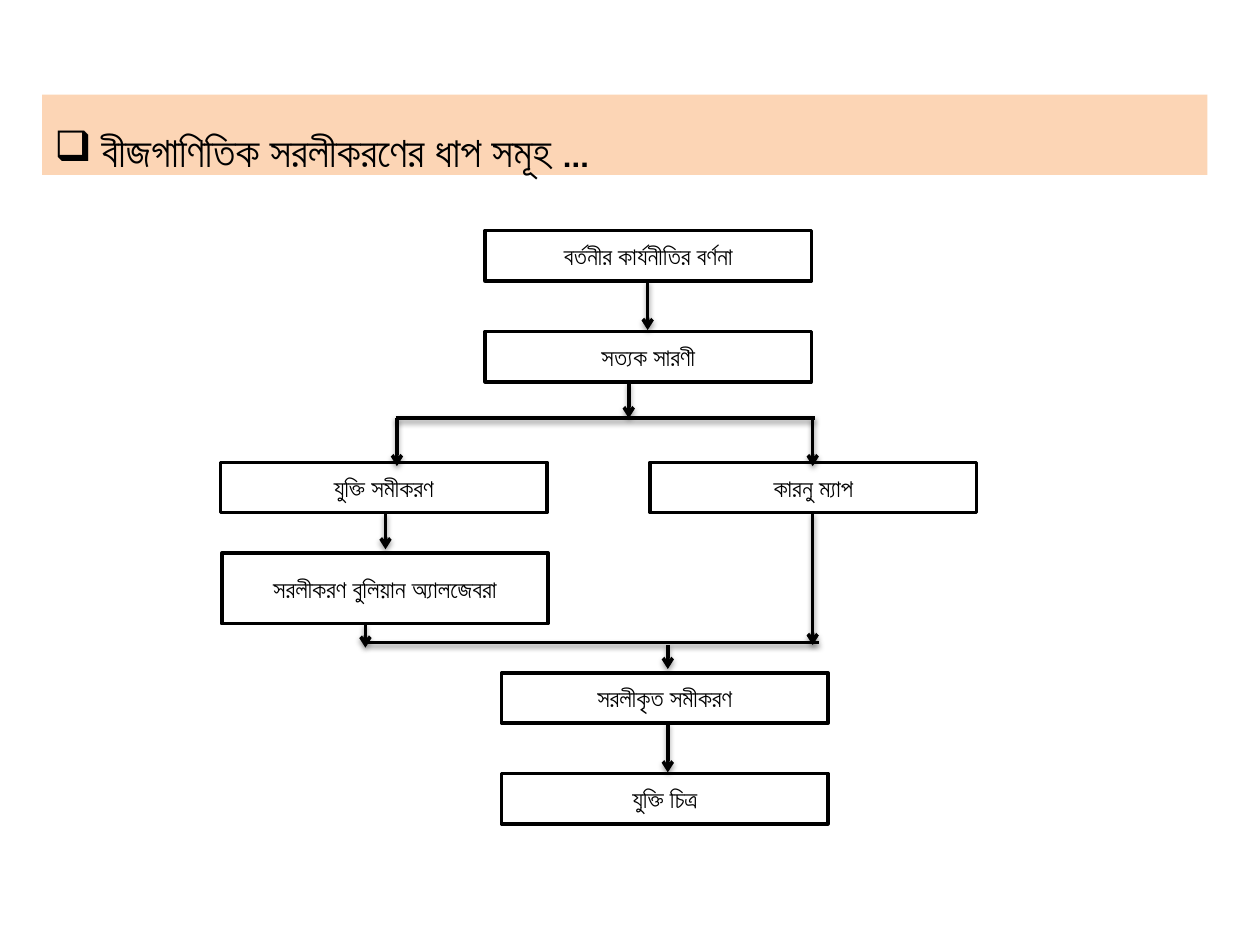
from lxml import etree
from pptx import Presentation
from pptx import util as u
from pptx.dml.color import RGBColor
from pptx.enum import shapes, text
from pptx.oxml import ns

FONT = "Calibri"
INK = "000000"
WIDE, HIGH = 186.5, 28.8

# Step boxes: left, top, height, label
STEPS = [
    (277.2, 131.8, HIGH, "বর্তনীর কার্যনীতির বর্ণনা"),
    (277.2, 189.4, HIGH, "সত্যক সারণী"),
    (126, 264.2, HIGH, "যুক্তি সমীকরণ"),
    (126.7, 316.1, 40.3, "সরলীকরণ বুলিয়ান অ্যালজেবরা"),
    (371.5, 264.2, HIGH, "কারনু ম্যাপ"),
    (286.6, 384.5, HIGH, "সরলীকৃত সমীকরণ"),
    (286.6, 442.1, HIGH, "যুক্তি চিত্র"),
]

# Downward arrows: x, top, bottom
ARROWS = [
    (370.1, 160.6, 188.6),
    (359.3, 218.2, 239),
    (226.8, 239, 266.4),
    (464.4, 239, 266.4),
    (220.3, 293, 313.9),
    (464.4, 293, 368.6),
    (208.8, 356.4, 370.1),
    (381.6, 368.6, 382.3),
    (381.6, 413.3, 441.4),
]

# Level bars: left, right, y
BARS = [(226.1, 465.8, 239), (208.8, 468, 367.2)]


def color(code):
    return RGBColor.from_string(code)


def child(node, tag, **attrs):
    return etree.SubElement(node, ns.qn(tag), attrs)


def block(slide, left, top, wide, high):
    shape = slide.shapes.add_shape(
        shapes.MSO_SHAPE.RECTANGLE,
        u.Pt(left), u.Pt(top), u.Pt(wide), u.Pt(high))
    shape.shadow.inherit = False
    shape.text_frame.word_wrap = True
    return shape


def write(para, words, size):
    run = para.add_run()
    run.text = words
    run.font.name = FONT
    run.font.size = u.Pt(size)
    run.font.color.rgb = color(INK)


def title(slide, words):
    shape = block(slide, 24, 54, 666, 46)
    shape.fill.solid()
    shape.fill.fore_color.rgb = color("FCD5B5")
    shape.line.fill.background()
    frame = shape.text_frame
    frame.vertical_anchor = text.MSO_ANCHOR.TOP
    frame.auto_size = text.MSO_AUTO_SIZE.SHAPE_TO_FIT_TEXT
    para = frame.paragraphs[0]
    para.alignment = text.PP_ALIGN.LEFT
    para.line_spacing = 1.5
    # Hanging bullet
    props = para._p.get_or_add_pPr()
    props.set("marL", str(u.Pt(27)))
    props.set("indent", str(u.Pt(-27)))
    child(props, "a:buChar", char="❑")
    write(para, words, 24)


def step(slide, left, top, high, words):
    shape = block(slide, left, top, WIDE, high)
    shape.fill.background()
    shape.line.color.rgb = color(INK)
    shape.line.width = u.Pt(2)
    frame = shape.text_frame
    frame.vertical_anchor = text.MSO_ANCHOR.MIDDLE
    para = frame.paragraphs[0]
    para.alignment = text.PP_ALIGN.CENTER
    write(para, words, 14)


def link(slide, x1, y1, x2, y2, head=False):
    line = slide.shapes.add_connector(
        shapes.MSO_CONNECTOR.STRAIGHT,
        u.Pt(x1), u.Pt(y1), u.Pt(x2), u.Pt(y2))
    line.line.color.rgb = color(INK)
    line.line.width = u.Pt(2)
    if head:
        child(line.line._get_or_add_ln(), "a:tailEnd", type="arrow")
    # Soft shadow below the line
    props = line._element.spPr
    cast = child(child(props, "a:effectLst"), "a:outerShdw",
                 blurRad=str(u.Pt(3.1)), dist=str(u.Pt(1.6)),
                 dir="5400000", rotWithShape="0")
    child(child(cast, "a:srgbClr", val=INK), "a:alpha", val="38000")


def main():
    deck = Presentation()
    deck.slide_width, deck.slide_height = u.Pt(720), u.Pt(540)
    slide = deck.slides.add_slide(deck.slide_layouts[6])

    # Heading band
    title(slide, "বীজগাণিতিক সরলীকরণের ধাপ সমূহ …")

    # Flow chart
    for item in STEPS:
        step(slide, *item)
    for left, right, y in BARS:
        link(slide, left, y, right, y)
    for x, top, low in ARROWS:
        link(slide, x, top, x, low, head=True)

    deck.save("out.pptx")


if __name__ == "__main__":
    main()
